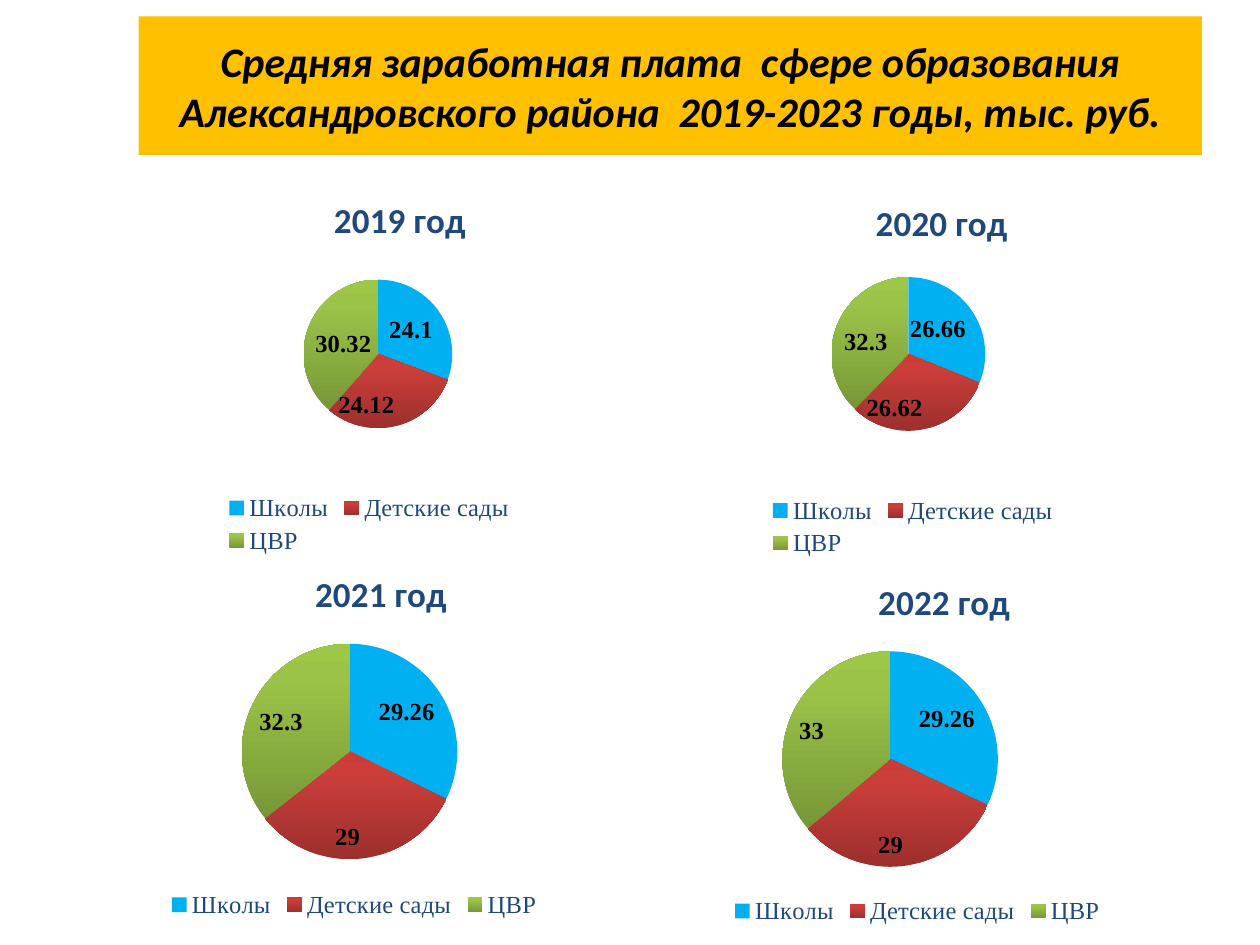
from copy import deepcopy

from lxml.etree import SubElement
from pptx import Presentation
from pptx.chart.data import CategoryChartData
from pptx.dml.color import RGBColor
from pptx.enum.chart import XL_CHART_TYPE as ChartType
from pptx.enum.chart import XL_LABEL_POSITION as LabelPosition
from pptx.enum.chart import XL_LEGEND_POSITION as LegendPosition
from pptx.enum.shapes import MSO_SHAPE as ShapeType
from pptx.enum.text import MSO_ANCHOR as Anchor
from pptx.enum.text import PP_ALIGN as Align
from pptx.oxml.ns import qn
from pptx.util import Inches, Pt

AMBER = RGBColor(0xFF, 0xC0, 0x00)
BLACK = RGBColor(0x00, 0x00, 0x00)
NAVY = RGBColor(0x1F, 0x49, 0x7D)
SKY = RGBColor(0x00, 0xB0, 0xF0)
REDS = [RGBColor(0x9C, 0x2F, 0x2D), RGBColor(0xCB, 0x3E, 0x3A), RGBColor(0xCE, 0x3B, 0x37)]
GREENS = [RGBColor(0x77, 0x97, 0x37), RGBColor(0x9B, 0xC3, 0x48), RGBColor(0x9D, 0xC7, 0x46)]
STOP_POSITIONS = [0, 0.8, 1]

HEADING = "Средняя заработная плата  сфере образования Александровского района  2019-2023 годы, тыс. руб."
CATEGORIES = ["Школы", "Детские сады", "ЦВР"]

# year, values, chart box, title corner, pie corner, pie diameter
YEARS = [
    ("2019 год", (24.1, 24.12, 30.32), (0.76, 1.33, 4.34, 3.11), (2.6, 1.5), (2.41, 2.22), 1.18),
    ("2020 год", (26.66, 26.62, 32.3), (5.18, 1.39, 4.13, 3.07), (6.9, 1.52), (6.6, 2.2), 1.22),
    ("2021 год", (29.26, 29, 32.3), (0.59, 4.34, 4.44, 2.99), (2.45, 4.47), (1.92, 5.11), 1.71),
    ("2022 год", (29.26, 29, 33), (5.06, 4.39, 4.44, 2.99), (6.92, 4.53), (6.21, 5.17), 1.71),
]


class SlideBuilder:
    heading_font = "Calibri"
    chart_font = "Times New Roman"

    def __init__(self, slide):
        self.slide = slide

    def style(self, font, name, size, color, bold=False, italic=False):
        font.name = name
        font.size = Pt(size)
        font.color.rgb = color
        font.bold = bold
        font.italic = italic

    def banner(self, text, box):
        shape = self.slide.shapes.add_shape(ShapeType.RECTANGLE, *map(Inches, box))
        shape.shadow.inherit = False
        shape.fill.solid()
        shape.fill.fore_color.rgb = AMBER
        shape.line.fill.background()
        text_frame = shape.text_frame
        text_frame.word_wrap = True
        text_frame.vertical_anchor = Anchor.MIDDLE
        text_frame.text = text
        paragraph = text_frame.paragraphs[0]
        paragraph.alignment = Align.CENTER
        self.style(paragraph.runs[0].font, self.heading_font, 24, BLACK, True, True)

    def gradient(self, fill, colors):
        fill.gradient()
        fill.gradient_angle = 90
        last_stop = fill.gradient_stops[1]._gs
        last_stop.addnext(deepcopy(last_stop))
        for stop, color, position in zip(fill.gradient_stops, colors, STOP_POSITIONS):
            stop.color.rgb = color
            stop.position = position

    def place(self, element, **settings):
        for old_layout in element.findall(qn("c:layout")):
            element.remove(old_layout)
        layout = SubElement(element, qn("c:layout"))
        manual = SubElement(layout, qn("c:manualLayout"))
        for name, value in settings.items():
            SubElement(manual, qn(f"c:{name}")).set("val", str(value))
        return layout

    def pie(self, year, values, box, title_corner, pie_corner, diameter):
        left, top, width, height = box
        data = CategoryChartData()
        data.categories = CATEGORIES
        data.add_series(year, values)
        chart = self.slide.shapes.add_chart(ChartType.PIE, *map(Inches, box), data).chart
        self.style(chart.font, self.heading_font, 10, BLACK)

        chart.has_title = True
        title = chart.chart_title
        title.text_frame.text = year
        run = title.text_frame.paragraphs[0].runs[0]
        self.style(run.font, self.heading_font, 20, NAVY, True)
        title_layout = self.place(
            title._element, xMode="edge", yMode="edge",
            x=round((title_corner[0] - left) / width, 4),
            y=round((title_corner[1] - top) / height, 4))
        title._element.find(qn("c:tx")).addnext(title_layout)

        plot_area = chart._chartSpace.chart.plotArea
        plot_layout = self.place(
            plot_area, layoutTarget="inner", xMode="edge", yMode="edge",
            x=round((pie_corner[0] - left) / width, 4),
            y=round((pie_corner[1] - top) / height, 4),
            w=round(diameter / width, 4), h=round(diameter / height, 4))
        plot_area.insert(0, plot_layout)

        chart.has_legend = True
        chart.legend.position = LegendPosition.BOTTOM
        chart.legend.include_in_layout = False
        self.style(chart.legend.font, self.chart_font, 14, NAVY)

        plot = chart.plots[0]
        plot.vary_by_categories = True
        plot.has_data_labels = True
        labels = plot.data_labels
        labels.show_value = True
        labels.show_percentage = False
        labels.position = LabelPosition.INSIDE_END
        self.style(labels.font, self.chart_font, 14, BLACK, True)

        schools, kindergartens, centre = (
            plot.series[0].points[index].format.fill for index in range(len(CATEGORIES)))
        schools.solid()
        schools.fore_color.rgb = SKY
        self.gradient(kindergartens, REDS)
        self.gradient(centre, GREENS)


def main():
    presentation = Presentation()
    presentation.slide_width = Inches(10)
    presentation.slide_height = Inches(7.5)
    builder = SlideBuilder(presentation.slides.add_slide(presentation.slide_layouts[6]))
    builder.banner(HEADING, (1.1, 0.13, 8.44, 1.1))
    for year in YEARS:
        builder.pie(*year)
    presentation.save("out.pptx")


if __name__ == "__main__":
    main()
